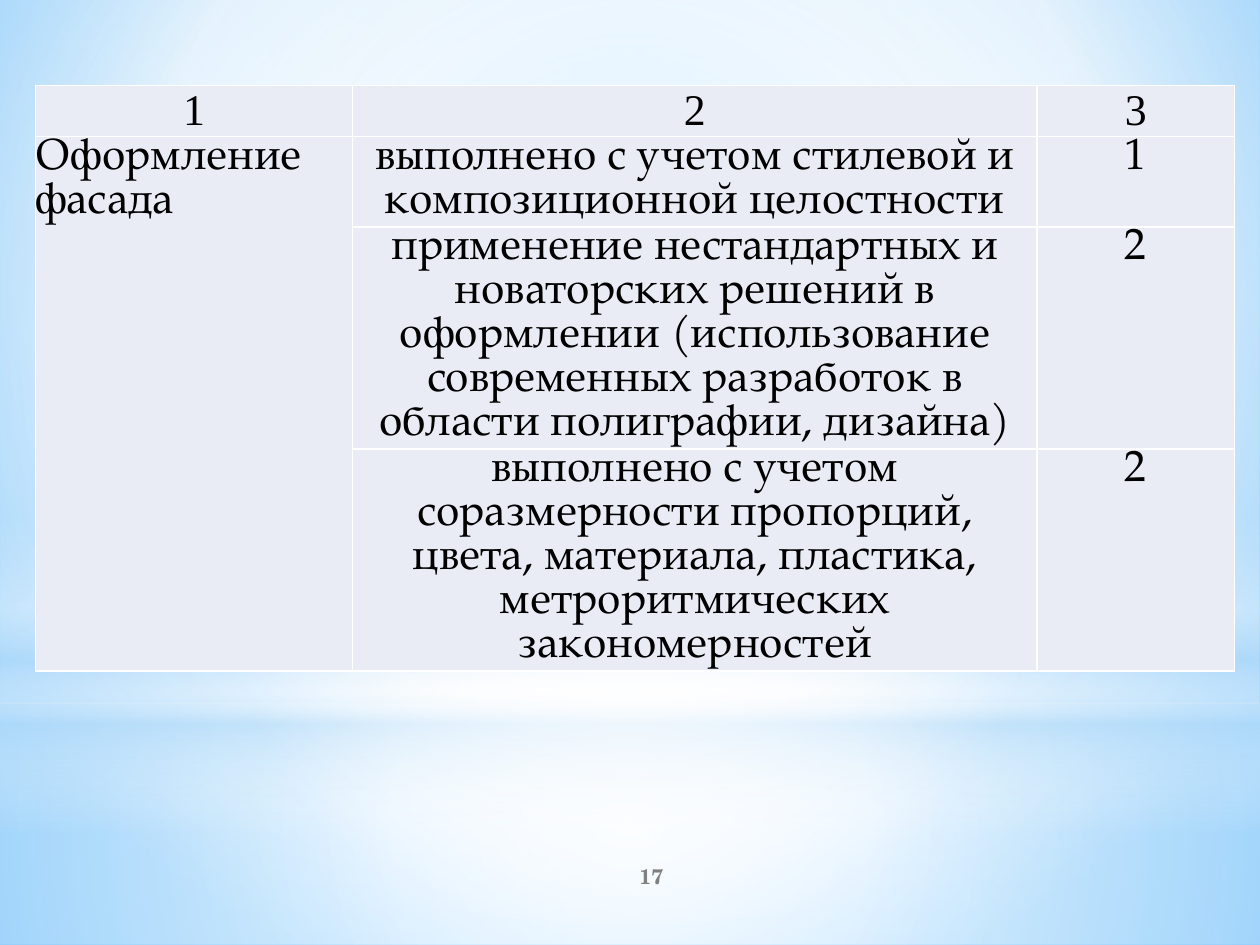
from lxml import etree
from pptx import Presentation
from pptx.dml.color import RGBColor
from pptx.enum import shapes, text
from pptx.oxml import ns
from pptx.util import Inches, Pt

BLACK = RGBColor(0x00, 0x00, 0x00)
GREY = RGBColor(0x80, 0x80, 0x80)
WHITE = RGBColor(0xFF, 0xFF, 0xFF)
PALE = RGBColor(0xE9, 0xEB, 0xF5)
SKY = RGBColor(0xB4, 0xDC, 0xFA)
LIGHT_BLUE = RGBColor(0x9E, 0xD5, 0xFF)
BLUE = RGBColor(0x5B, 0xB9, 0xFF)

HEADINGS = ["1", "2", "3"]
SUBJECT = "Оформление фасада"
CRITERIA = [
    ("выполнено с учетом стилевой и композиционной целостности", "1"),
    ("применение нестандартных и новаторских решений в оформлении "
     "(использование современных разработок в области полиграфии, дизайна)", "2"),
    ("выполнено с учетом соразмерности пропорций, цвета, материала, "
     "пластика, метроритмических закономерностей", "2"),
]
PAGE_NUMBER = "17"
COLUMN_WIDTHS = [2.52, 5.43, 1.57]
ROW_HEIGHTS = [0.39, 0.7, 1.75, 1.75]

CENTRE = (50, 50, 50, 50)
BACKDROP = [(0, LIGHT_BLUE, 100), (60, WHITE, 100), (100, BLUE, 100)]
RECTANGLE = shapes.MSO_SHAPE.RECTANGLE
GLOWS = [
    (RECTANGLE, (0, 5.58, 10, 1.92), CENTRE,
     [(0, WHITE, 91), (37, WHITE, 76), (100, SKY, 79)]),
    (RECTANGLE, (0, 0, 10, 5.58), CENTRE,
     [(0, WHITE, 89), (48, WHITE, 62), (100, SKY, 79)]),
    (RECTANGLE, (0, 4.12, 10, 2.5), None,
     [(0, WHITE, 0), (29, WHITE, 30), (45, SKY, 40),
      (55, WHITE, 26), (65, SKY, 60), (100, WHITE, 0)]),
    (shapes.MSO_SHAPE.OVAL, (0, 1.75, 10, 5.58), CENTRE,
     [(0, WHITE, 100), (56, WHITE, 0)]),
]


def add_node(parent, tag, **attributes):
    values = {name: str(value) for name, value in attributes.items()}
    return etree.SubElement(parent, ns.qn(tag), values)


def paint_gradient(fill, owner, stops, focus=None):
    fill.gradient()
    gradient = owner.find(".//" + ns.qn("a:gradFill"))
    for child in list(gradient):
        gradient.remove(child)
    stop_list = add_node(gradient, "a:gsLst")
    for position, colour, opacity in stops:
        stop = add_node(stop_list, "a:gs", pos=position * 1000)
        tint = add_node(stop, "a:srgbClr", val=colour)
        if opacity < 100:
            add_node(tint, "a:alpha", val=opacity * 1000)
    if focus:
        circle = add_node(gradient, "a:path", path="circle")
        sides = {side: share * 1000 for side, share in zip("ltrb", focus)}
        add_node(circle, "a:fillToRect", **sides)
    else:
        add_node(gradient, "a:lin", ang=5400000, scaled=0)


def write(frame, words, font="TeX Gyre Pagella", size=25, colour=BLACK,
          bold=False, align=text.PP_ALIGN.CENTER):
    paragraph = frame.paragraphs[0]
    paragraph.alignment = align
    run = paragraph.add_run()
    run.text = words
    run.font.name = font
    run.font.size = Pt(size)
    run.font.bold = bold
    run.font.color.rgb = colour


def style_cell(cell):
    cell.margin_left = cell.margin_right = 0
    cell.margin_top = cell.margin_bottom = Inches(0.01)
    properties = cell._tc.get_or_add_tcPr()
    for side in ("L", "R", "T", "B"):
        border = add_node(properties, "a:ln" + side, w=Pt(1))
        add_node(add_node(border, "a:solidFill"), "a:srgbClr", val=WHITE)
    cell.fill.solid()
    cell.fill.fore_color.rgb = PALE


def add_glows(slide):
    for kind, box, focus, stops in GLOWS:
        glow = slide.shapes.add_shape(kind, *map(Inches, box))
        glow.shadow.inherit = False
        glow.line.fill.background()
        paint_gradient(glow.fill, glow.element, stops, focus)


def add_criteria(slide):
    table = slide.shapes.add_table(
        len(ROW_HEIGHTS), len(COLUMN_WIDTHS), Inches(0.28), Inches(0.68),
        Inches(sum(COLUMN_WIDTHS)), Inches(sum(ROW_HEIGHTS))).table
    table.first_row = table.horz_banding = False
    for column, width in zip(table.columns, COLUMN_WIDTHS):
        column.width = Inches(width)
    for row, height in zip(table.rows, ROW_HEIGHTS):
        row.height = Inches(height)
    for cell in table.iter_cells():
        style_cell(cell)
    for index, heading in enumerate(HEADINGS):
        write(table.cell(0, index).text_frame, heading, font="Times New Roman")
    subject = table.cell(1, 0)
    subject.merge(table.cell(len(CRITERIA), 0))
    write(subject.text_frame, SUBJECT, align=text.PP_ALIGN.LEFT)
    for index, criterion in enumerate(CRITERIA, 1):
        for column, words in enumerate(criterion, 1):
            write(table.cell(index, column).text_frame, words)


def add_page_number(slide):
    frame = slide.shapes.add_textbox(
        Inches(4.17), Inches(6.75), Inches(2), Inches(0.4)).text_frame
    frame.word_wrap = True
    frame.vertical_anchor = text.MSO_ANCHOR.MIDDLE
    write(frame, PAGE_NUMBER, font="TeX Gyre Schola", size=12, colour=GREY, bold=True)


def main():
    deck = Presentation()
    deck.slide_width, deck.slide_height = Inches(10), Inches(7.5)
    slide = deck.slides.add_slide(deck.slide_layouts[6])
    paint_gradient(slide.background.fill, slide.element, BACKDROP, (20, 10, 20, 60))
    add_glows(slide)
    add_criteria(slide)
    add_page_number(slide)
    deck.save("out.pptx")


if __name__ == "__main__":
    main()
